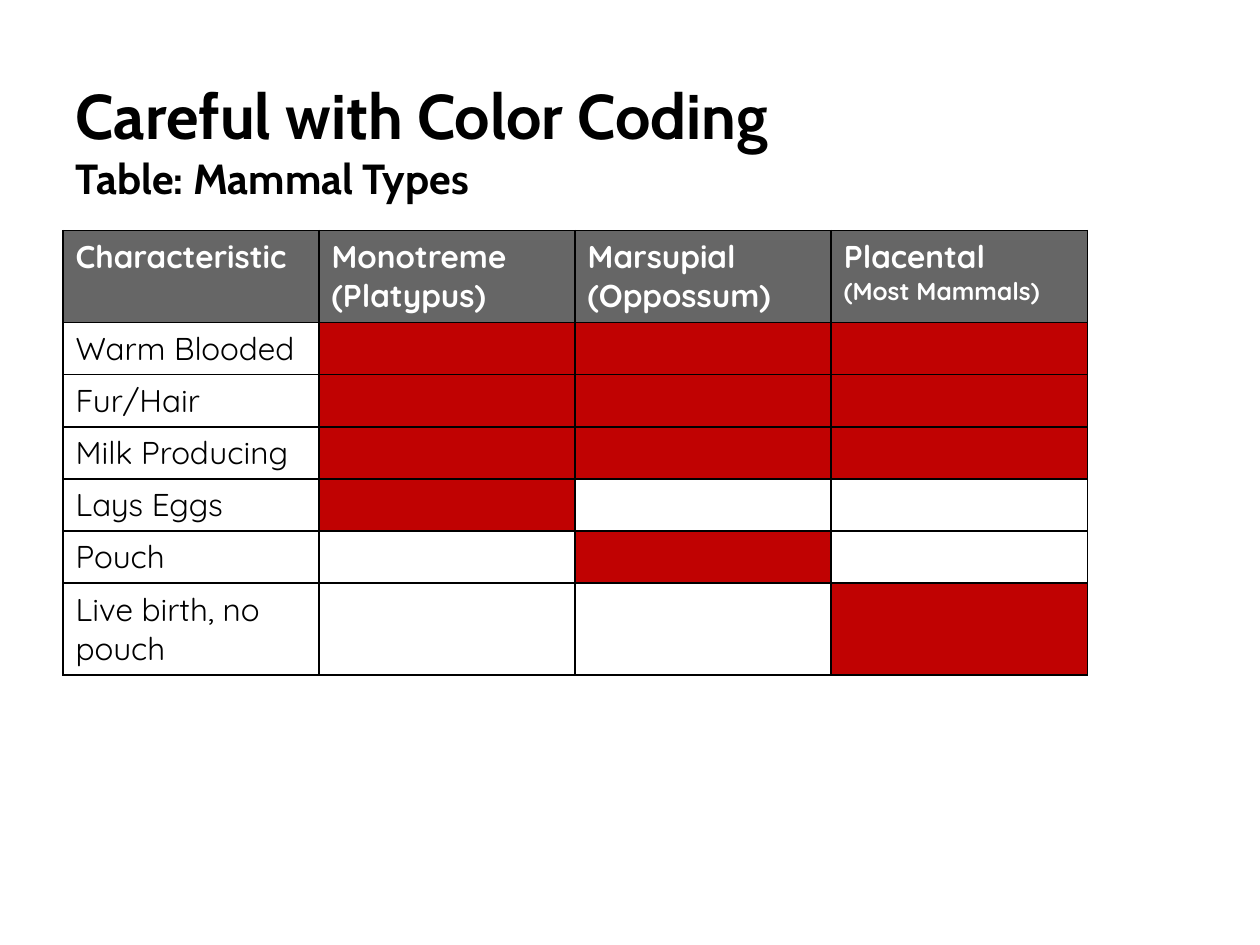
from lxml.etree import SubElement
from pptx import Presentation
from pptx.dml.color import RGBColor
from pptx.enum.text import MSO_ANCHOR as Anchor, PP_ALIGN as Align
from pptx.oxml.ns import qn
from pptx.util import Inches, Pt

BLACK, WHITE, GRAY, RED = "000000", "FFFFFF", "666666", "C00202"
HEADERS = [
    [("Characteristic", 18)],
    [("Monotreme (Platypus)", 18)],
    [("Marsupial", 18), ("(Oppossum)", 18)],
    [("Placental", 18), ("(Most Mammals)", 14)],
]
TRAITS = [
    ("Warm Blooded", (1, 2, 3)),
    ("Fur/Hair", (1, 2, 3)),
    ("Milk Producing", (1, 2, 3)),
    ("Lays Eggs", (1,)),
    ("Pouch", (2,)),
    ("Live birth, no pouch", (3,)),
]


def color(value):
    """Turn a hex string into a colour."""
    return RGBColor.from_string(value)


def write_lines(para, lines, face, ink, bold):
    """Write (text, size) lines as runs parted by line breaks."""
    for index, (text, size) in enumerate(lines):
        if index:
            para.add_line_break()
        span = para.add_run()
        span.text = text
        font = span.font
        font.name, font.size, font.bold = face, Pt(size), bold
        font.color.rgb = color(ink)


def paint_cell(cell, fill):
    """Give a cell thin black borders and a solid fill."""
    props = cell._tc.get_or_add_tcPr()
    for side in ("a:lnL", "a:lnR", "a:lnT", "a:lnB"):
        line = SubElement(props, qn(side), w=str(Pt(1)))
        solid = SubElement(line, qn("a:solidFill"))
        SubElement(solid, qn("a:srgbClr"), val=BLACK)
    cell.fill.solid()
    cell.fill.fore_color.rgb = color(fill)


def add_title(page, box):
    """Place the two-line heading in the title placeholder."""
    title = page.shapes.title
    title.left, title.top, title.width, title.height = map(Inches, box)
    frame = title.text_frame
    frame.vertical_anchor = Anchor.BOTTOM
    para = frame.paragraphs[0]
    para.alignment = Align.LEFT
    lines = [("Careful with Color Coding", 36), ("Table: Mammal Types", 24)]
    write_lines(para, lines, "Cabin", BLACK, True)


def add_mammal_table(page, box):
    """Place the table that marks each mammal type's traits in red."""
    left, top, width, height = map(Inches, box)
    rows, columns = len(TRAITS) + 1, len(HEADERS)
    table = page.shapes.add_table(rows, columns, left, top, width, height).table
    for row in table.rows:
        row.height = Inches(0.41)
    table.rows[0].height = table.rows[rows - 1].height = Inches(0.73)
    for column, lines in enumerate(HEADERS):
        cell = table.cell(0, column)
        paint_cell(cell, GRAY)
        write_lines(cell.text_frame.paragraphs[0], lines, "Quicksand", WHITE, True)
    for row, (trait, marked) in enumerate(TRAITS, 1):
        for column in range(columns):
            paint_cell(table.cell(row, column), RED if column in marked else WHITE)
        para = table.cell(row, 0).text_frame.paragraphs[0]
        write_lines(para, [(trait, 18)], "Quicksand", BLACK, False)


def main():
    """Build the slide and save the deck."""
    deck = Presentation()
    deck.slide_width, deck.slide_height = Inches(10), Inches(7.5)
    page = deck.slides.add_slide(deck.slide_layouts[5])
    add_title(page, (0.5, 0.41, 7.89, 1.25))
    add_mammal_table(page, (0.5, 1.83, 8.13, 3.52))
    deck.save("out.pptx")


if __name__ == "__main__":
    main()
